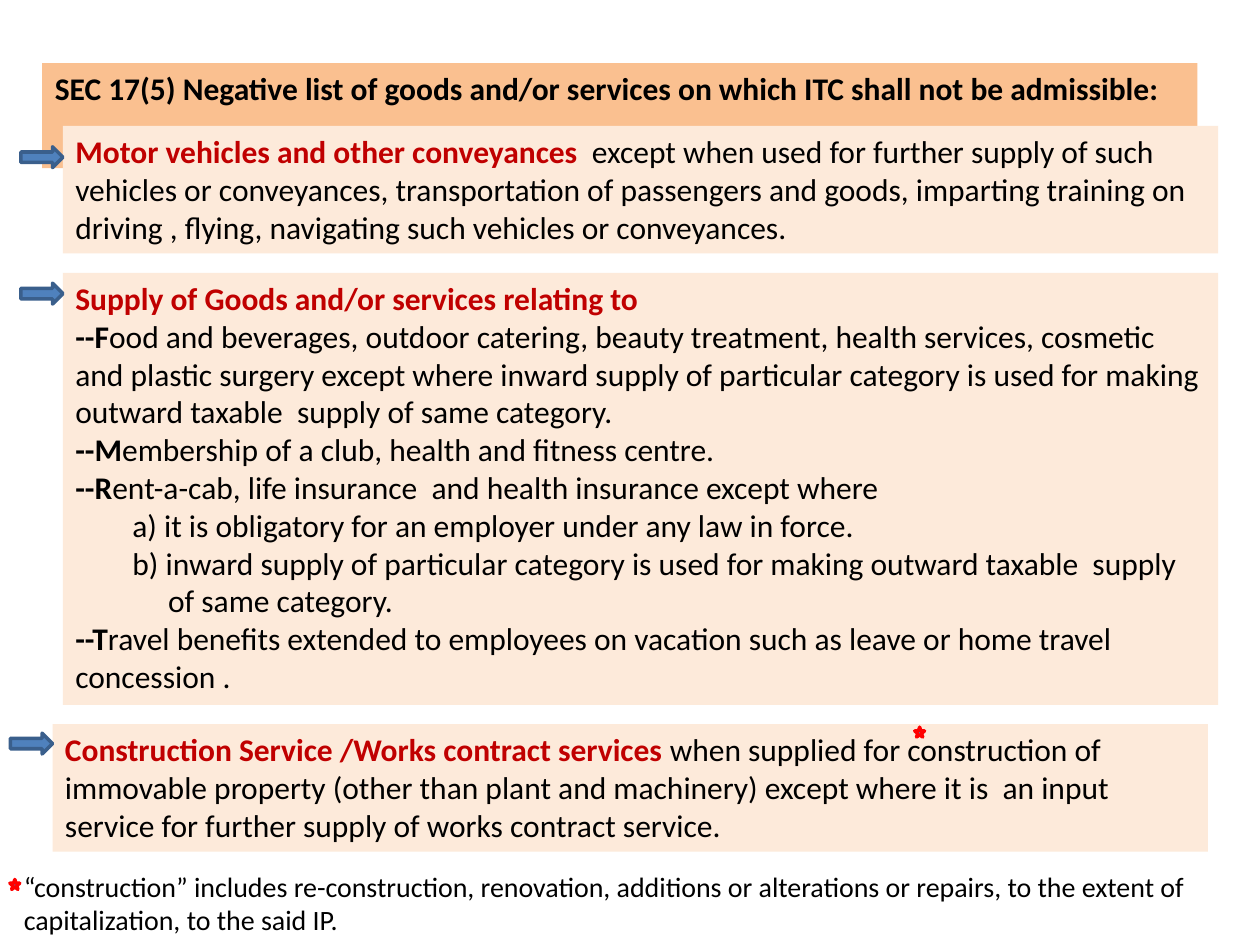
import pptx
import pptx.dml.color
import pptx.enum.shapes
import pptx.enum.text
import pptx.util

Cm = pptx.util.Cm
SHAPE = pptx.enum.shapes.MSO_SHAPE
BLACK, CRIMSON, RED, BLUE = "000000", "C00000", "FF0000", "4F81BD"
PEACH, ORANGE, NAVY = "FDEADA", "FAC090", "3A5F8C"
PANEL_WIDTH = 23.29

VEHICLES = [
    (0, "Motor vehicles and other conveyances", CRIMSON,
     "  except when used for further supply of such vehicles or conveyances, "
     "transportation of passengers and goods, imparting training on driving , flying, "
     "navigating such vehicles or conveyances."),
]
SUPPLIES = [
    (0, "Supply of Goods and/or services relating to", CRIMSON, ""),
    (0, "--F", BLACK,
     "ood and beverages, outdoor catering, beauty treatment, health services, cosmetic "
     "and plastic surgery except where inward supply of particular category is used for "
     "making outward taxable  supply of same category."),
    (0, "--M", BLACK, "embership of a club, health and fitness centre."),
    (0, "--R", BLACK, "ent-a-cab, life insurance  and health insurance except where"),
    (1.15, "", BLACK, "a) it is obligatory for an employer under any law in force."),
    (1.15, "", BLACK,
     "b) inward supply of particular category is used for making outward taxable  supply"),
    (1.87, "", BLACK, "of same category."),
    (0, "--T", BLACK,
     "ravel benefits extended to employees on vacation such as leave or home travel "
     "concession ."),
]
CONSTRUCTION = [
    (0, "Construction Service /Works contract services", CRIMSON,
     " when supplied for construction of immovable property (other than plant and "
     "machinery) except where it is  an input service for further supply of works "
     "contract service."),
]
FOOTNOTE = [
    (0, "", BLACK,
     "“construction” includes re-construction, renovation, additions or alterations or "
     "repairs, to the extent of capitalization, to the said IP."),
]


def colour(value):
    """Return the colour for a hex string."""
    return pptx.dml.color.RGBColor.from_string(value)


def paint(shape, fill, line=None):
    """Give a shape a solid fill and an optional outline."""
    shape.fill.solid()
    shape.fill.fore_color.rgb = colour(fill)
    if line:
        shape.line.color.rgb = colour(line)
        shape.line.width = pptx.util.Pt(2)
    else:
        shape.line.fill.background()


def add_span(para, text, size, bold, ink):
    """Append one formatted run to a paragraph."""
    span = para.add_run()
    span.text = text
    span.font.name = "Calibri"
    span.font.size = pptx.util.Pt(size)
    span.font.bold = bold
    span.font.color.rgb = colour(ink)


def write(box, paragraphs, size=18):
    """Fill a box with paragraphs of a bold lead and a plain remainder."""
    frame = box.text_frame
    frame.word_wrap = True
    frame.auto_size = pptx.enum.text.MSO_AUTO_SIZE.SHAPE_TO_FIT_TEXT
    frame.vertical_anchor = pptx.enum.text.MSO_ANCHOR.TOP
    for index, (indent, lead, ink, rest) in enumerate(paragraphs):
        para = frame.paragraphs[0] if index == 0 else frame.add_paragraph()
        para.alignment = pptx.enum.text.PP_ALIGN.LEFT
        if indent:
            properties = para._p.get_or_add_pPr()
            properties.set("marL", str(Cm(indent)))
            properties.set("indent", "0")
        if lead:
            add_span(para, lead, size, True, ink)
        if rest:
            add_span(para, rest, size, False, BLACK)


def add_title(page, text):
    """Place the heading on its orange band."""
    title = page.shapes.title
    title.left, title.top = Cm(0.85), Cm(1.27)
    title.width, title.height = Cm(PANEL_WIDTH), Cm(1.03)
    paint(title, ORANGE)
    write(title, [(0, text, BLACK, "")])


def add_mark(page, kind, left, top, width, height, fill, line):
    """Add a small outlined preset shape."""
    mark = page.shapes.add_shape(kind, Cm(left), Cm(top), Cm(width), Cm(height))
    mark.shadow.inherit = False
    paint(mark, fill, line)


def add_panel(page, left, top, height, arrow_top, paragraphs):
    """Add a peach text panel with an arrow touching its left edge."""
    panel = page.shapes.add_shape(
        SHAPE.RECTANGLE, Cm(left), Cm(top), Cm(PANEL_WIDTH), Cm(height))
    panel.shadow.inherit = False
    paint(panel, PEACH)
    write(panel, paragraphs)
    add_mark(page, SHAPE.RIGHT_ARROW, left - 0.85, arrow_top, 0.85, 0.42, BLUE, NAVY)


def add_footnote(page):
    """Add the note that explains the star."""
    note = page.shapes.add_textbox(Cm(0.23), Cm(17.4), Cm(24.71), Cm(1.62))
    write(note, FOOTNOTE, 16)


def main():
    """Build and save the slide."""
    deck = pptx.Presentation()
    deck.slide_width, deck.slide_height = Cm(25.4), Cm(19.05)
    page = deck.slides.add_slide(deck.slide_layouts[5])
    add_title(page, "SEC 17(5) Negative list of goods and/or services on which ITC "
                    "shall not be admissible:")
    add_panel(page, 1.27, 2.54, 2.57, 2.96, VEHICLES)
    add_panel(page, 1.27, 5.5, 8.71, 5.71, SUPPLIES)
    add_panel(page, 1.06, 14.6, 2.57, 14.78, CONSTRUCTION)
    for left, top in ((18.44, 14.66), (0.2, 17.73)):
        add_mark(page, SHAPE.STAR_5_POINT, left, top, 0.2, 0.2, BLUE, RED)
    add_footnote(page)
    deck.save("out.pptx")


if __name__ == "__main__":
    main()
